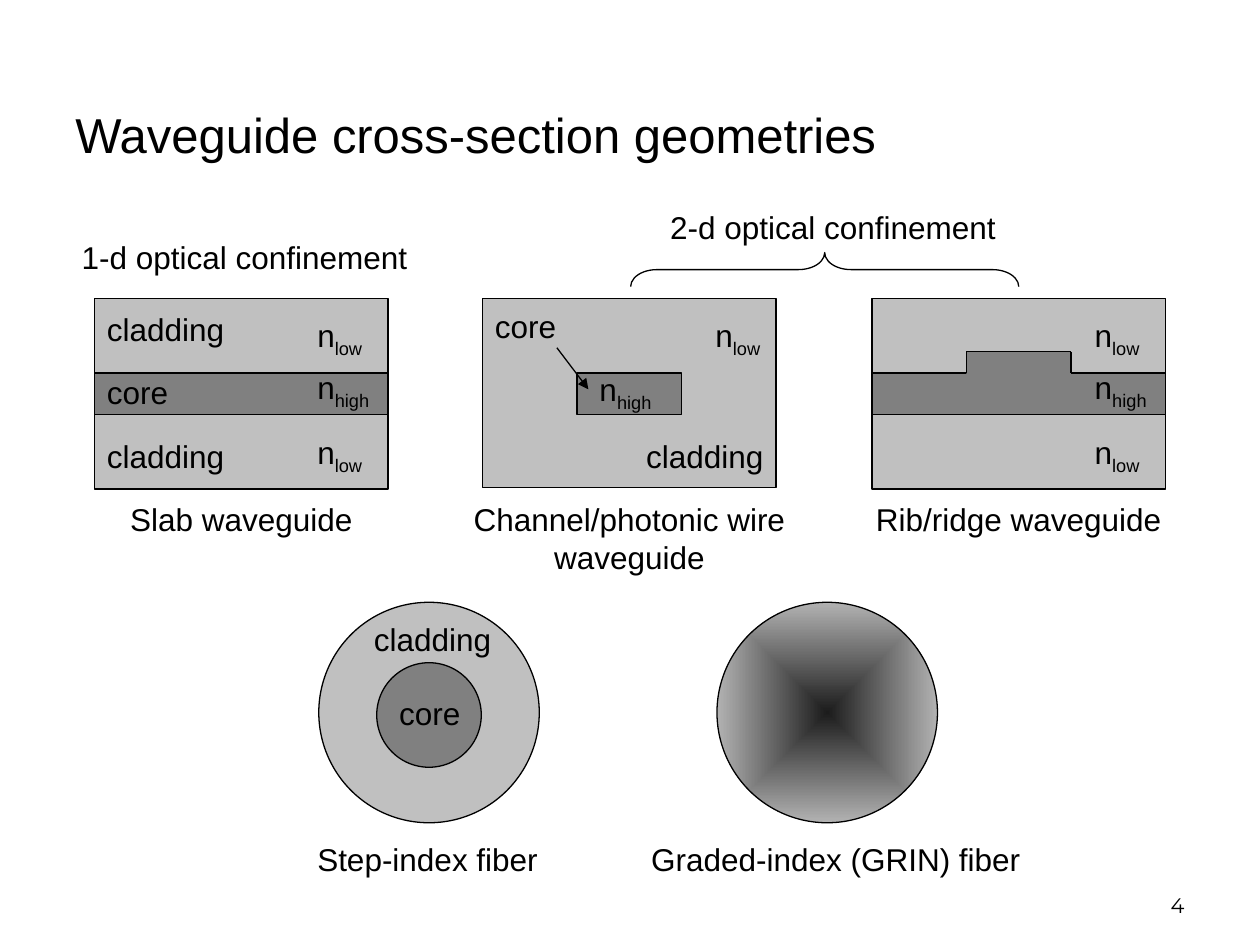
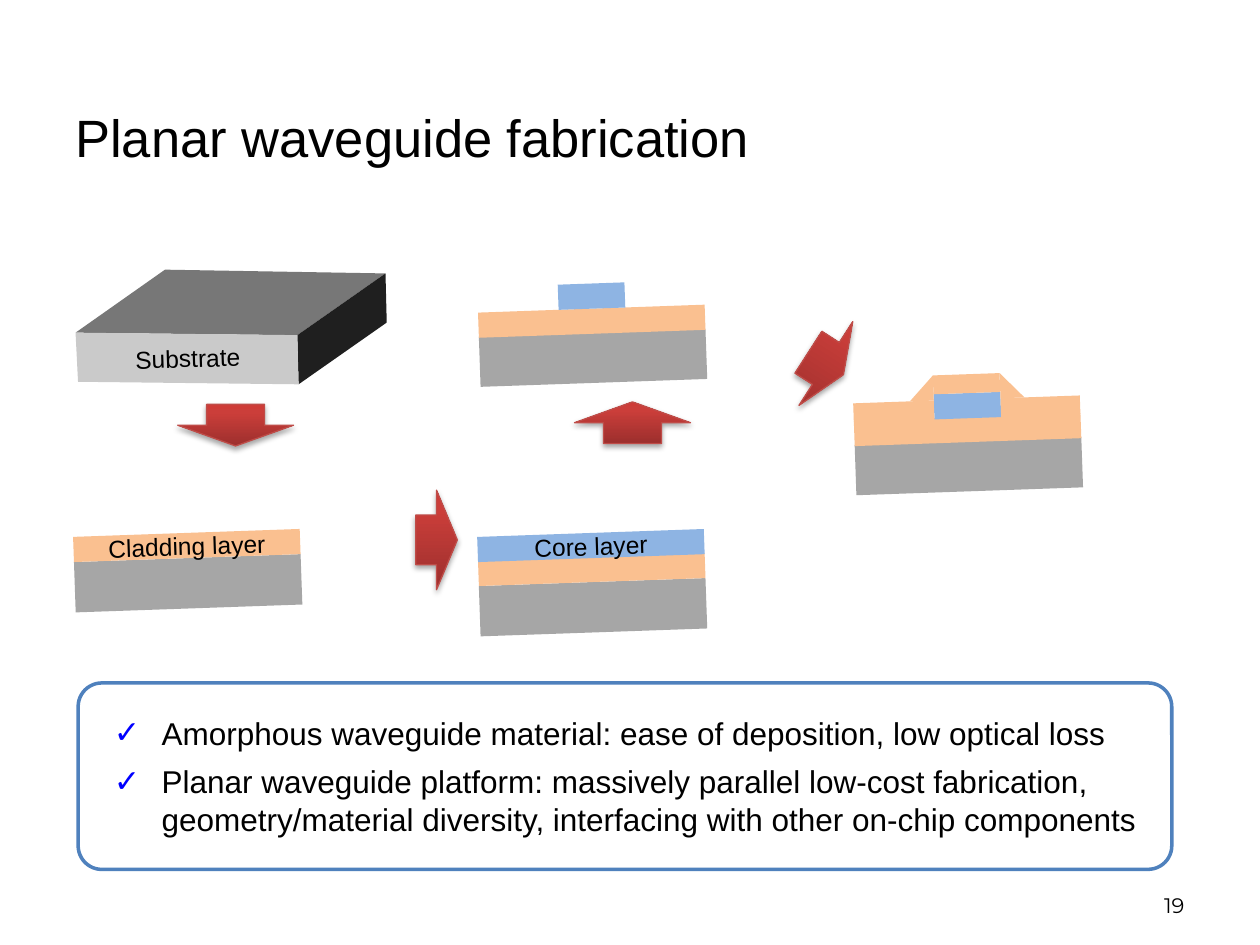
import math
from lxml import etree
from pptx import Presentation
from pptx import util as u
from pptx.dml import color
from pptx.enum import shapes, text
from pptx.oxml import ns

BLACK = "000000"
LIGHT, DARK = "C0C0C0", "808080"
SUBSTRATE, CLADDING, CORE = "A6A6A6", "FAC090", "8EB4E3"
ARROW_LINE, FRAME, CHECK = "BF4C48", "4F81BD", "0000FF"
ARROW_STOPS = [(0, "9C2F2D"), (80, "CB3E3A"), (100, "CE3B37")]
GRIN_STOPS = [(0, "1C1C1C"), (100, "B2B2B2")]
TILT = -2
SHAPE = shapes.MSO_SHAPE
ALIGN = text.PP_ALIGN
ANCHOR = text.MSO_ANCHOR
PANEL_LEFTS = [0.75, 3.83, 6.92]
PANEL_TOP, PANEL_WIDTH, PANEL_HEIGHT = 2.37, 2.33, 1.5
CORE_TOP, CORE_HEIGHT = 2.96, 0.33
CLAD_HEIGHT = CORE_TOP - PANEL_TOP
CAPTION_WIDTH = 2.95


def rgb(value):
    return color.RGBColor.from_string(value)


def inches(*lengths):
    return [u.Inches(length) for length in lengths]


def add_xml(parent, tag, **attributes):
    return etree.SubElement(parent, ns.qn(tag), {k: str(v) for k, v in attributes.items()})


def write(frame, content, size=18, font="Arial", ink=BLACK, align=ALIGN.LEFT,
          anchor=ANCHOR.TOP, wrap=False, bullet=None, gap=0):
    frame.word_wrap = wrap
    frame.vertical_anchor = anchor
    for number, line in enumerate(content.split("\n")):
        paragraph = frame.add_paragraph() if number else frame.paragraphs[0]
        if bullet:
            properties = paragraph._p.get_or_add_pPr()
            properties.set("marL", str(u.Inches(0.51)))
            properties.set("indent", str(u.Inches(-0.38)))
            add_xml(add_xml(properties, "a:buClr"), "a:srgbClr", val=CHECK)
            add_xml(properties, "a:buFont", typeface=font)
            add_xml(properties, "a:buChar", char=bullet)
        paragraph.alignment = align
        if number and gap:
            paragraph.space_before = u.Pt(gap)
        for level, part in enumerate(line.split("_")):
            run = paragraph.add_run()
            run.text = part
            run.font.size = u.Pt(size)
            run.font.name = font
            run.font.color.rgb = rgb(ink)
            if level:
                run._r.get_or_add_rPr().set("baseline", "-25000")


def label(slide, content, left, top, width=1.2, height=0.4, rotation=0, **style):
    box = slide.shapes.add_textbox(*inches(left, top, width, height))
    box.rotation = rotation
    write(box.text_frame, content, **style)


def paint(shape, fill=None, line=None, weight=0.75):
    shape.shadow.inherit = False
    if fill:
        shape.fill.solid()
        shape.fill.fore_color.rgb = rgb(fill)
    else:
        shape.fill.background()
    if line:
        shape.line.color.rgb = rgb(line)
        shape.line.width = u.Pt(weight)
    else:
        shape.line.fill.background()
    return shape


def block(slide, kind, left, top, width, height, fill=None, line=BLACK, weight=0.75):
    shape = slide.shapes.add_shape(kind, *inches(left, top, width, height))
    return paint(shape, fill, line, weight)


def set_gradient(shape, stops, angle=None):
    properties = shape._element.spPr
    solid = properties.find(ns.qn("a:noFill"))
    gradient = etree.Element(ns.qn("a:gradFill"), {"rotWithShape": "1"})
    properties.replace(solid, gradient)
    stop_list = add_xml(gradient, "a:gsLst")
    for position, value in stops:
        stop = add_xml(stop_list, "a:gs", pos=position * 1000)
        add_xml(stop, "a:srgbClr", val=value)
    if angle is None:
        center = add_xml(gradient, "a:path", path="shape")
        add_xml(center, "a:fillToRect", l=50000, t=50000, r=50000, b=50000)
    else:
        add_xml(gradient, "a:lin", ang=angle * 60000, scaled=0)


def connect(slide, start, end, arrow=False):
    line = slide.shapes.add_connector(shapes.MSO_CONNECTOR.STRAIGHT, *inches(*start, *end))
    line.line.color.rgb = rgb(BLACK)
    line.line.width = u.Pt(0.75)
    if arrow:
        add_xml(line.line._get_or_add_ln(), "a:tailEnd", type="triangle")
    add_xml(line._element.spPr, "a:effectLst")


def polygon(slide, points, fill):
    corners = [inches(*point) for point in points]
    builder = slide.shapes.build_freeform(*corners[0], scale=1.0)
    builder.add_line_segments(corners[1:], close=True)
    paint(builder.convert_to_shape(), fill)


def process_arrow(slide, kind, left, top, width, height, rotation=0):
    arrow = block(slide, kind, left, top, width, height, line=ARROW_LINE)
    arrow.rotation = rotation
    set_gradient(arrow, ARROW_STOPS, 270)
    effects = arrow._element.spPr.find(ns.qn("a:effectLst"))
    shadow = add_xml(effects, "a:outerShdw", blurRad=u.Pt(3.1), dist=u.Pt(1.8),
                     dir=90 * 60000, rotWithShape=0)
    add_xml(add_xml(shadow, "a:srgbClr", val=BLACK), "a:alpha", val=35000)


def tilted_stack(slide, center, layers):
    angle = math.radians(TILT)
    for left, top, width, height, fill, *extra in layers:
        kind = extra[0] if extra else SHAPE.RECTANGLE
        across = left + width / 2 - center[0]
        down = top + height / 2 - center[1]
        x = center[0] + across * math.cos(angle) - down * math.sin(angle)
        y = center[1] + across * math.sin(angle) + down * math.cos(angle)
        layer = block(slide, kind, x - width / 2, y - height / 2, width, height, fill, None)
        layer.rotation = TILT
        if "mirror" in extra:
            layer._element.spPr.find(ns.qn("a:xfrm")).set("flipH", "1")
        elif extra[1:]:
            write(layer.text_frame, extra[1], size=14, align=ALIGN.CENTER, anchor=ANCHOR.MIDDLE)


def new_slide(deck, title, number, top, width, height, size):
    slide = deck.slides.add_slide(deck.slide_layouts[6])
    label(slide, title, 0.5, top, width, height, size=size, anchor=ANCHOR.MIDDLE, wrap=True)
    label(slide, number, 7.17, 6.83, 2.33, 0.5, size=12, font="Montserrat",
          align=ALIGN.RIGHT, anchor=ANCHOR.BOTTOM, wrap=True)
    return slide


def layered_panel(slide, left):
    for top, height, fill in [(PANEL_TOP, CLAD_HEIGHT, LIGHT), (CORE_TOP, CORE_HEIGHT, DARK),
                              (CORE_TOP + CORE_HEIGHT, CLAD_HEIGHT, LIGHT)]:
        block(slide, SHAPE.RECTANGLE, left, top, PANEL_WIDTH, height, fill)


def layer_indices(slide, left):
    for index, top in [("n_low", 2.46), ("n_high", 2.87), ("n_low", 3.39)]:
        label(slide, index, left + 1.67, top, 0.7)


def geometries(deck):
    slide = new_slide(deck, "Waveguide cross-section geometries", "4", 0.6, 9, 0.92, 28)
    slab, channel, rib = PANEL_LEFTS
    captions = ["Slab waveguide", "Channel/photonic wire\nwaveguide", "Rib/ridge waveguide"]
    for left, caption in zip(PANEL_LEFTS, captions):
        label(slide, caption, left + (PANEL_WIDTH - CAPTION_WIDTH) / 2, 3.92, CAPTION_WIDTH,
              align=ALIGN.CENTER)
    label(slide, "1-d optical confinement", 0.55, 1.84, 3)
    label(slide, "2-d optical confinement", 5.22, 1.6, 3)
    brace = block(slide, SHAPE.LEFT_BRACE, 6.41, 0.6, 0.27, 3.08)
    brace.rotation = 90
    brace.adjustments[0] = 0.771

    layered_panel(slide, slab)
    layer_indices(slide, slab)
    for part, top in [("cladding", 2.41), ("core", 2.91), ("cladding", 3.42)]:
        label(slide, part, slab, top)

    block(slide, SHAPE.RECTANGLE, channel, PANEL_TOP, PANEL_WIDTH, PANEL_HEIGHT, LIGHT)
    block(slide, SHAPE.RECTANGLE, channel + 0.75, CORE_TOP, 0.83, CORE_HEIGHT, DARK)
    for part, left, top in [("n_high", 4.66, 2.89), ("n_low", 5.58, 2.46),
                            ("core", channel, 2.39), ("cladding", 5.03, 3.42)]:
        label(slide, part, left, top)
    connect(slide, (4.42, 2.76), (4.67, 3.09), arrow=True)

    layered_panel(slide, rib)
    ridge_top, ridge_left, ridge_right = 2.79, rib + 0.75, rib + 1.58
    block(slide, SHAPE.RECTANGLE, ridge_left, ridge_top, 0.83, CORE_HEIGHT, DARK, None)
    outline = [(ridge_left, CORE_TOP), (ridge_left, ridge_top),
               (ridge_right, ridge_top), (ridge_right, CORE_TOP)]
    for start, end in zip(outline, outline[1:]):
        connect(slide, start, end)
    layer_indices(slide, rib)

    block(slide, SHAPE.OVAL, 2.53, 4.78, 1.75, 1.75, LIGHT)
    block(slide, SHAPE.OVAL, 2.99, 5.26, 0.83, 0.83, DARK)
    label(slide, "core", 3.07, 5.46)
    label(slide, "cladding", 2.87, 4.87)
    label(slide, "Step-index fiber", 2.42, 6.62, 2.2)
    grin = block(slide, SHAPE.OVAL, 5.69, 4.78, 1.75, 1.75)
    set_gradient(grin, GRIN_STOPS)
    label(slide, "Graded-index (GRIN) fiber", 5.07, 6.62, 3.4)


def substrate_slab(slide):
    front_left, front_right = (0.6, 2.64), (2.36, 2.66)
    back_left, back_right = (1.31, 2.14), (3.06, 2.17)
    base_left, base_right, base_back = (0.62, 3.03), (2.37, 3.05), (3.07, 2.56)
    polygon(slide, [front_left, back_left, back_right, front_right], "777777")
    polygon(slide, [front_right, back_right, base_back, base_right], "1F1F1F")
    polygon(slide, [front_left, front_right, base_right, base_left], "CACACA")
    label(slide, "Substrate", 0.59, 2.64, 1.8, 0.4, rotation=TILT, size=14,
          align=ALIGN.CENTER, anchor=ANCHOR.MIDDLE)


def fabrication(deck):
    slide = new_slide(deck, "Planar waveguide fabrication", "19", 0.5, 8.83, 1.17, 30)
    box, corner = SHAPE.RECTANGLE, SHAPE.RIGHT_TRIANGLE
    substrate_slab(slide)
    tilted_stack(slide, (1.49, 4.53), [
        (0.59, 4.43, 1.8, 0.4, SUBSTRATE),
        (0.59, 4.23, 1.8, 0.2, CLADDING, box, "Cladding layer")])
    tilted_stack(slide, (4.7, 4.62), [
        (3.8, 4.62, 1.8, 0.4, SUBSTRATE),
        (3.8, 4.42, 1.8, 0.2, CLADDING),
        (3.8, 4.23, 1.8, 0.2, CORE, box, "Core layer")])
    tilted_stack(slide, (4.7, 2.65), [
        (3.8, 2.64, 1.8, 0.4, SUBSTRATE),
        (3.8, 2.45, 1.8, 0.2, CLADDING),
        (4.44, 2.25, 0.53, 0.2, CORE)])
    tilted_stack(slide, (7.68, 3.43), [
        (6.78, 3.5, 1.8, 0.4, SUBSTRATE),
        (6.78, 3.31, 1.8, 0.2, CLADDING),
        (7.42, 3.12, 0.53, 0.2, CORE),
        (6.78, 3.17, 0.64, 0.15, CLADDING),
        (7.95, 3.17, 0.63, 0.15, CLADDING),
        (7.42, 2.97, 0.53, 0.15, CLADDING),
        (7.95, 2.97, 0.19, 0.2, CLADDING, corner),
        (7.23, 2.97, 0.19, 0.2, CLADDING, corner, "mirror")])
    process_arrow(slide, SHAPE.DOWN_ARROW, 1.41, 3.21, 0.92, 0.33)
    process_arrow(slide, SHAPE.RIGHT_ARROW, 3.3, 3.89, 0.33, 0.79)
    process_arrow(slide, SHAPE.UP_ARROW, 4.56, 3.19, 0.92, 0.33)
    process_arrow(slide, SHAPE.RIGHT_ARROW, 6.39, 2.49, 0.33, 0.79, 32.7)

    benefits = block(slide, SHAPE.ROUNDED_RECTANGLE, 0.62, 5.42, 8.68, 1.48, "FFFFFF", FRAME, 2)
    benefits.adjustments[0] = 0.127
    write(benefits.text_frame,
          "Amorphous waveguide material: ease of deposition, low optical loss\n"
          "Planar waveguide platform: massively parallel low-cost fabrication, "
          "geometry/material diversity, interfacing with other on-chip components",
          anchor=ANCHOR.MIDDLE, wrap=True, bullet="✓", gap=6)


def main():
    deck = Presentation()
    deck.slide_width, deck.slide_height = inches(10, 7.5)
    geometries(deck)
    fabrication(deck)
    deck.save("out.pptx")


if __name__ == "__main__":
    main()
